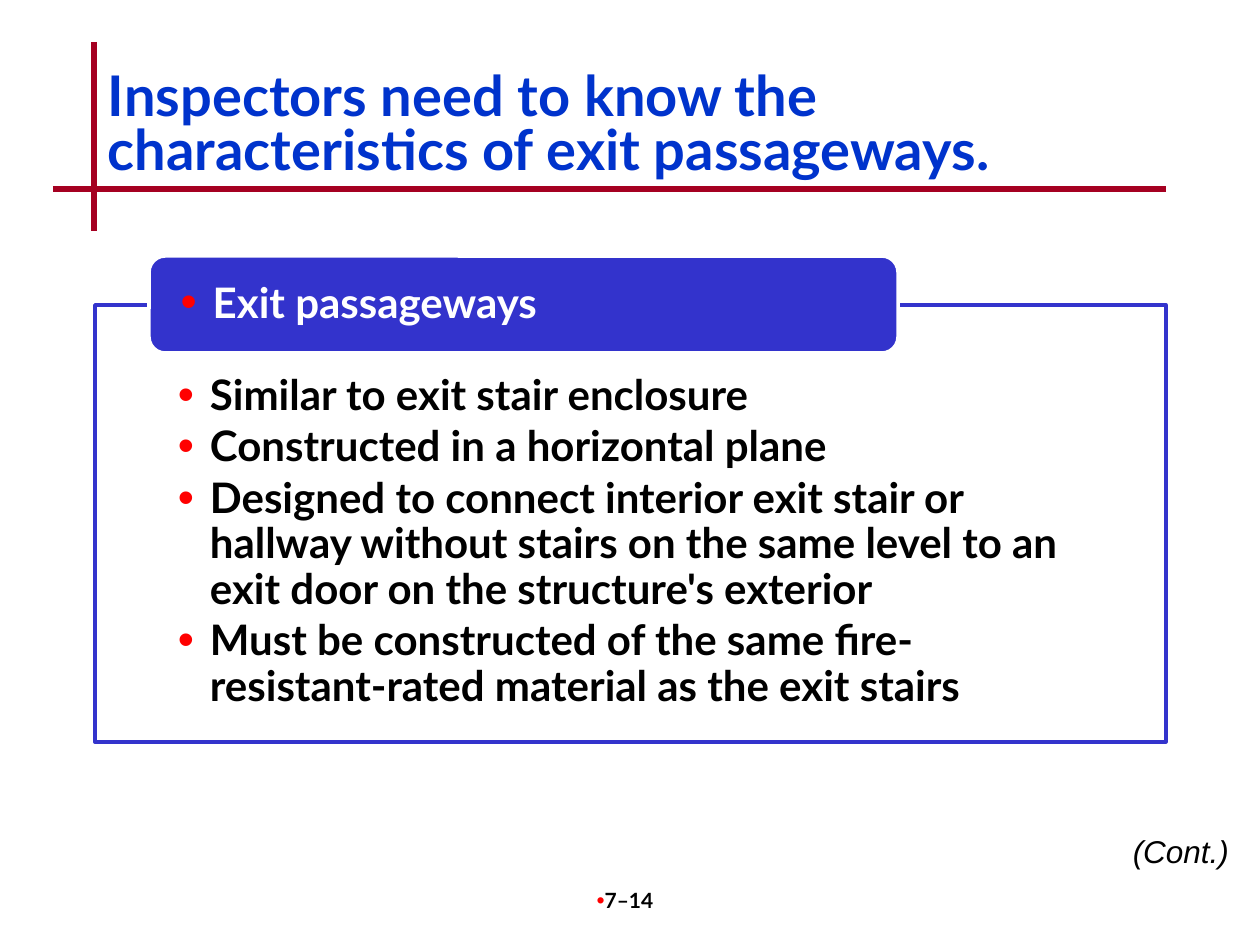
"""Build the exit passageways slide with a framed bullet list."""
from lxml.etree import SubElement
from pptx import Presentation
from pptx.dml.color import RGBColor
from pptx.enum.shapes import MSO_CONNECTOR as Connector, MSO_SHAPE as Shape
from pptx.enum.text import MSO_ANCHOR as Anchor, PP_ALIGN as Align
from pptx.oxml.ns import qn
from pptx.util import Pt

EMU_PER_PX = 914400 / 126
CRIMSON = RGBColor(0xA5, 0x00, 0x21)
TITLE_BLUE = RGBColor(0x00, 0x33, 0xCC)
INDIGO = RGBColor(0x33, 0x33, 0xCC)
BLACK = RGBColor(0x00, 0x00, 0x00)
WHITE = RGBColor(0xFF, 0xFF, 0xFF)
BULLET_RED = "FF0000"


def px(length):
    return round(length * EMU_PER_PX)


def write(shape, lines, font, layout, margins=(13, 6, 13, 6), anchor=Anchor.TOP, hanging=None):
    frame = shape.text_frame
    frame.word_wrap = True
    frame.vertical_anchor = anchor
    for side, margin in zip(("left", "top", "right", "bottom"), margins):
        setattr(frame, f"margin_{side}", px(margin))
    for index, line in enumerate(lines):
        paragraph = frame.add_paragraph() if index else frame.paragraphs[0]
        paragraph.text = line
        for name, value in layout.items():
            setattr(paragraph, name, value)
        if hanging is not None:
            properties = paragraph._p.get_or_add_pPr()
            properties.set("marL", str(px(hanging)))
            properties.set("indent", str(-px(hanging)))
            color = SubElement(properties, qn("a:buClr"))
            SubElement(color, qn("a:srgbClr"), val=BULLET_RED)
            SubElement(properties, qn("a:buSzPct"), val="110000")
            SubElement(properties, qn("a:buFont"), typeface="Arial")
            SubElement(properties, qn("a:buChar"), char="•")
        run_font = paragraph.runs[0].font
        run_font.color.rgb = font["color"]
        for name, value in font.items():
            if name != "color":
                setattr(run_font, name, value)


presentation = Presentation()
presentation.slide_width = px(1260)
presentation.slide_height = px(945)
slide = presentation.slides.add_slide(presentation.slide_layouts[6])
shapes = slide.shapes

for ends in ((94, 42, 94, 231), (53, 189, 1166, 189)):
    rule = shapes.add_connector(Connector.STRAIGHT, *map(px, ends))
    rule.line.color.rgb = CRIMSON
    rule.line.width = Pt(3)
    SubElement(rule._element.spPr, qn("a:effectLst"))

lato = {"name": "Lato", "bold": True}
page_number = shapes.add_textbox(px(494), px(882), px(262), px(63))
write(page_number, ["7–14"], {**lato, "size": Pt(12), "color": BLACK},
      {"alignment": Align.CENTER}, hanging=0)

title = shapes.add_textbox(px(95), px(68), px(1071), px(126))
write(title, ["Inspectors need to know the characteristics of exit passageways."],
      {**lato, "size": Pt(32), "color": TITLE_BLUE},
      {"alignment": Align.LEFT, "line_spacing": 0.8})

continued = shapes.add_textbox(px(1032), px(826), px(210), px(50))
write(continued, ["(Cont.)"],
      {"name": "Arial", "size": Pt(18), "italic": True, "color": BLACK},
      {"alignment": Align.RIGHT})

panels = []
for kind, box, fill, outline in (
    (Shape.RECTANGLE, (95, 305, 1071, 437), WHITE, INDIGO),
    (Shape.ROUNDED_RECTANGLE, (149, 256, 749, 97), INDIGO, WHITE),
):
    panel = shapes.add_shape(kind, *map(px, box))
    panel.shadow.inherit = False
    panel.fill.solid()
    panel.fill.fore_color.rgb = fill
    panel.line.color.rgb = outline
    panel.line.width = Pt(2)
    panels.append(panel)

frame_panel, heading_panel = panels
characteristics = [
    "Similar to exit stair enclosure",
    "Constructed in a horizontal plane",
    "Designed to connect interior exit stair or hallway without stairs on the same level "
    "to an exit door on the structure's exterior",
    "Must be constructed of the same fire-resistant-rated material as the exit stairs",
]
list_layout = {"alignment": Align.LEFT, "line_spacing": 0.9}
write(frame_panel, characteristics, {**lato, "size": Pt(24), "color": BLACK},
      {**list_layout, "space_after": Pt(3.6)}, margins=(83, 69, 83, 24), hanging=32)
write(heading_panel, ["Exit passageways"], {**lato, "size": Pt(24), "color": WHITE},
      list_layout, margins=(27, 0, 27, 0), anchor=Anchor.MIDDLE, hanging=32)

presentation.save("out.pptx")
